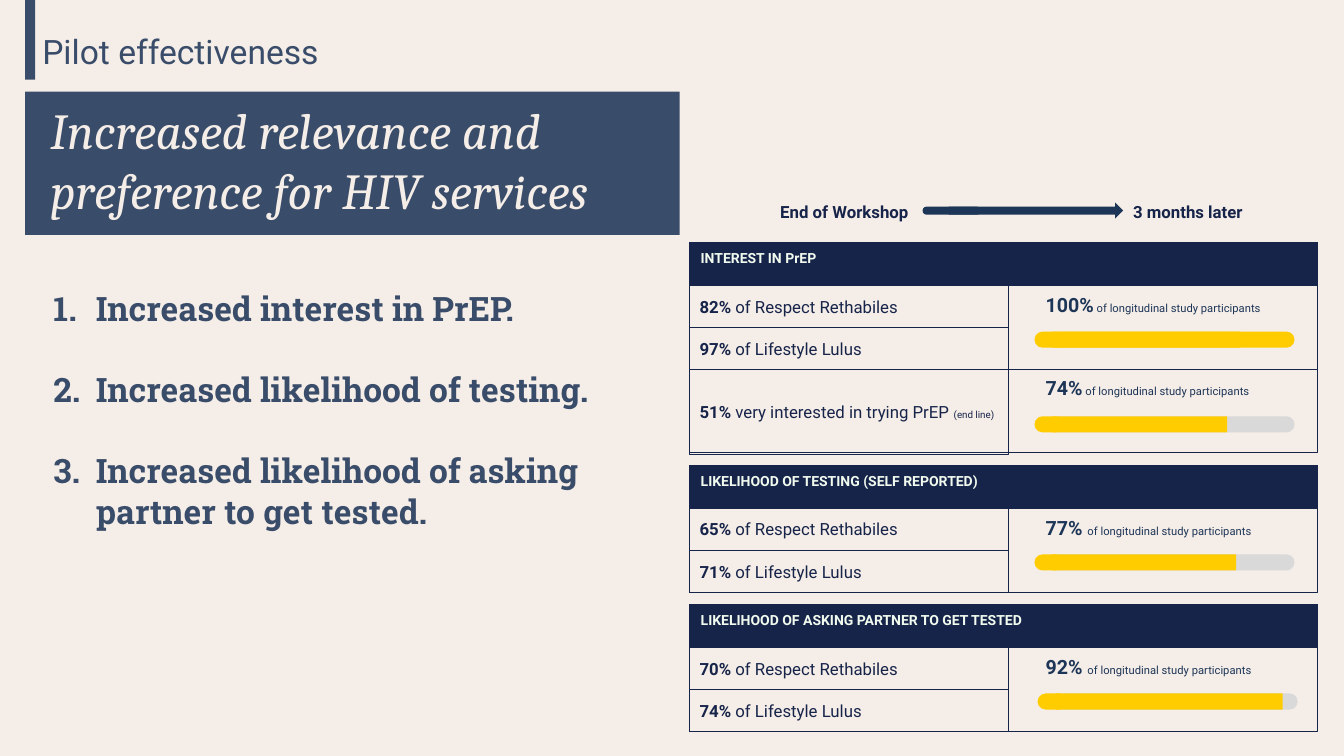
from lxml.etree import SubElement
from pptx import Presentation
from pptx.dml.color import RGBColor
from pptx.enum.shapes import MSO_SHAPE
from pptx.enum.text import MSO_ANCHOR, PP_ALIGN
from pptx.oxml.ns import qn
from pptx.util import Inches, Pt

CREAM = RGBColor(0xF5, 0xED, 0xE7)
SLATE = RGBColor(0x39, 0x4C, 0x69)
NAVY = RGBColor(0x17, 0x24, 0x4A)
BLUE = RGBColor(0x1D, 0x35, 0x57)
MINT = RGBColor(0xF1, 0xFA, 0xEE)
GOLD = RGBColor(0xFF, 0xCC, 0x00)
GREY = RGBColor(0xD9, 0xD9, 0xD9)

LEFT, WIDTH, ROW, CELL = 6.84, 6.23, 0.42, 3.16
SIDE = 10.26
STUDY = "of longitudinal study participants"
GROUPS = ("Respect Rethabiles", "Lifestyle Lulus")


def add_box(slide, kind, area, fill=None, line=None):
    box = slide.shapes.add_shape(kind, *map(Inches, area))
    box.shadow.inherit = False
    if fill is None:
        box.fill.background()
    else:
        box.fill.solid()
        box.fill.fore_color.rgb = fill
    if line is None:
        box.line.fill.background()
    else:
        box.line.color.rgb = line
        box.line.width = Pt(0.75)
    return box


def set_frame(shape, pads, anchor=MSO_ANCHOR.TOP):
    frame = shape.text_frame
    frame.word_wrap = True
    frame.vertical_anchor = anchor
    left, top, right, base = map(Inches, pads)
    frame.margin_left, frame.margin_top = left, top
    frame.margin_right, frame.margin_bottom = right, base
    return frame


def add_run(par, text, size, color, bold=False, font="Roboto", slant=False):
    run = par.add_run()
    run.text = text
    run.font.size = Pt(size)
    run.font.name = font
    run.font.bold = bold
    run.font.italic = slant
    run.font.color.rgb = color


def add_text(slide, area, pads, anchor=MSO_ANCHOR.TOP):
    return set_frame(slide.shapes.add_textbox(*map(Inches, area)), pads, anchor)


def add_cell(slide, top, tall, share, label, note=""):
    box = add_box(slide, MSO_SHAPE.RECTANGLE, (LEFT, top, CELL, tall), line=NAVY)
    par = set_frame(box, (0.1, 0, 0.1, 0), MSO_ANCHOR.MIDDLE).paragraphs[0]
    par.alignment = PP_ALIGN.LEFT
    add_run(par, share, 12, NAVY, True)
    add_run(par, label, 12, NAVY)
    if note:
        add_run(par, note, 7, NAVY)


def add_panel(slide, top, tall, title, shares):
    add_box(slide, MSO_SHAPE.RECTANGLE, (LEFT, top, WIDTH, tall), line=NAVY)
    head = add_box(slide, MSO_SHAPE.RECTANGLE, (LEFT, top, WIDTH, ROW), NAVY, NAVY)
    par = set_frame(head, (0.11, 0, 0.1, 0.12), MSO_ANCHOR.MIDDLE).paragraphs[0]
    par.alignment = PP_ALIGN.LEFT
    add_run(par, title, 10, MINT, True)
    for row, (share, group) in enumerate(zip(shares, GROUPS), 1):
        add_cell(slide, top + row * ROW, ROW, share, f" of {group}")


def add_bar(slide, left, top, width, track=GREY):
    parts = (
        (left + 0.15, 2.43, 0.5, track),
        (left, 0.29, 0.5, GOLD),
        (left + 0.18, width, 0, GOLD),
    )
    for start, wide, curve, fill in parts:
        area = (start, top, wide, 0.16)
        bar = add_box(slide, MSO_SHAPE.ROUNDED_RECTANGLE, area, fill)
        bar.adjustments[0] = curve


def add_result(slide, top, share, label):
    area = (SIDE, top, 2.91, 0.35)
    par = add_text(slide, area, (0.11, 0, 0.1, 0), MSO_ANCHOR.MIDDLE).paragraphs[0]
    par.line_spacing = 1.18
    add_run(par, share, 14, BLUE, True)
    add_run(par, label, 8, BLUE)


def add_stage(slide, left, width, text, align):
    par = add_text(slide, (left, 1.87, width, 0.4), (0.1,) * 4).paragraphs[0]
    par.alignment = align
    par.line_spacing = 1.18
    add_run(par, text, 12, NAVY, True)


def add_arrow(slide):
    tail = add_box(slide, MSO_SHAPE.ROUNDED_RECTANGLE, (9.15, 2.05, 0.58, 0.08), BLUE)
    tail.adjustments[0] = 0.5
    add_box(slide, MSO_SHAPE.RIGHT_ARROW, (9.41, 2.01, 1.73, 0.16), BLUE)


def add_list(slide, items):
    frame = add_text(slide, (0.25, 2.76, 6.49, 4.49), (0.2, 0.1, 0, 0))
    for place, item in enumerate(items):
        par = frame.add_paragraph() if place else frame.paragraphs[0]
        if place:
            par.space_before = Pt(29)
        props = par._p.get_or_add_pPr()
        props.set("marL", str(Inches(0.5)))
        props.set("indent", str(Inches(-0.42)))
        tint = SubElement(props, qn("a:buClr"))
        SubElement(tint, qn("a:srgbClr")).set("val", str(SLATE))
        SubElement(props, qn("a:buAutoNum")).set("type", "arabicPeriod")
        add_run(par, item, 24, SLATE, True, "Roboto Slab")


def add_title(slide):
    add_box(slide, MSO_SHAPE.RECTANGLE, (0.25, 0.91, 6.49, 1.42), SLATE)
    add_box(slide, MSO_SHAPE.RECTANGLE, (0.25, 0, 0.1, 0.79), SLATE)
    topic = add_text(slide, (0.42, 0.31, 6.33, 0.61), (0,) * 4)
    add_run(topic.paragraphs[0], "Pilot effectiveness", 24, SLATE)
    claim = add_text(slide, (0.25, 0.88, 6.49, 1.94), (0.25, 0.1, 0, 0))
    add_run(claim.paragraphs[0], "Increased relevance and preference for HIV services",
            36, CREAM, font="Cambria", slant=True)


def main():
    deck = Presentation()
    deck.slide_width, deck.slide_height = Inches(13.33), Inches(7.5)
    slide = deck.slides.add_slide(deck.slide_layouts[6])
    slide.background.fill.solid()
    slide.background.fill.fore_color.rgb = CREAM

    add_title(slide)
    add_list(slide, (
        "Increased interest in PrEP.",
        "Increased likelihood of testing.",
        "Increased likelihood of asking partner to get tested.",
    ))

    add_stage(slide, 6.85, 2.26, "End of Workshop", PP_ALIGN.RIGHT)
    add_arrow(slide)
    add_stage(slide, 11.14, 2.08, "3 months later", PP_ALIGN.LEFT)

    panels = (
        (2.41, 2.08, "INTEREST IN PrEP", ("82%", "97%")),
        (2.41, 3 * ROW, "", ()),
        (4.62, 3 * ROW, "LIKELIHOOD OF TESTING (SELF REPORTED)", ("65%", "71%")),
        (6, 3 * ROW, "LIKELIHOOD OF ASKING PARTNER TO GET TESTED", ("70%", "74%")),
    )
    for top, tall, title, shares in panels:
        if title:
            add_panel(slide, top, tall, title, shares)
        else:
            add_box(slide, MSO_SHAPE.RECTANGLE, (LEFT, top, WIDTH, tall), line=NAVY)
    add_cell(slide, 3.67, 2 * ROW, "51%", " very interested in trying PrEP ", "(end line)")

    results = (
        (2.83, "100%", " " + STUDY, SIDE, 3.29, 1.86, GOLD),
        (3.65, "74%", " " + STUDY, SIDE, 4.13, 1.73, GREY),
        (5.04, "77% ", STUDY, SIDE, 5.5, 1.82, GREY),
        (6.42, "92% ", STUDY, 10.29, 6.88, 2.25, GREY),
    )
    for top, share, label, left, level, width, track in results:
        add_result(slide, top, share, label)
        add_bar(slide, left, level, width, track)

    deck.save("out.pptx")


if __name__ == "__main__":
    main()
